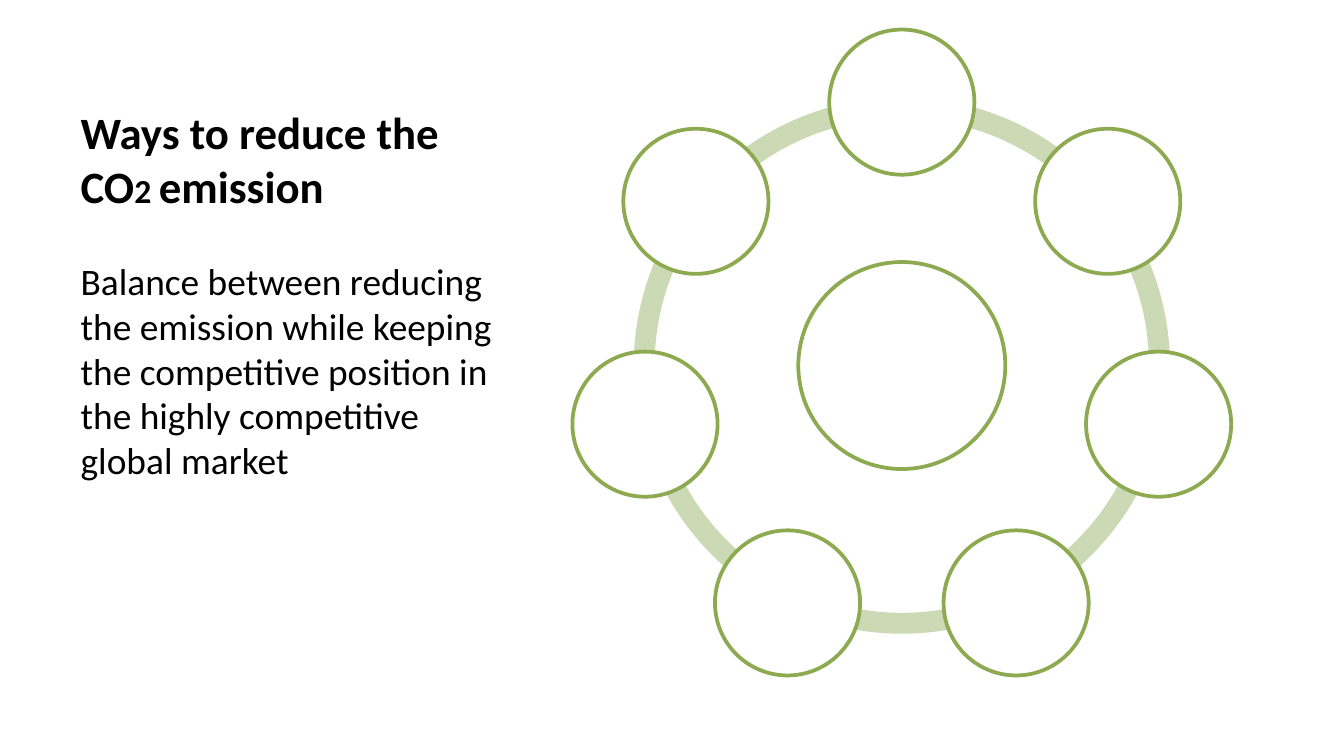
import math

from pptx import Presentation
from pptx import util as u
from pptx.dml.color import RGBColor
from pptx.enum import shapes, text

COLORS = {"text": "000000", "arc": "CBDAB5", "line": "8DAA51", "fill": "FFFFFF"}
TITLE = [("Ways to reduce the CO", 24), ("2 ", 18), ("emission", 24)]
BODY = [("Balance between reducing the emission while keeping the competitive "
         "position in the highly competitive global market", 20)]
NODES = 7


def rgb(name):
    """Return the named colour."""
    return RGBColor.from_string(COLORS[name])


def fill_placeholder(sp, box, runs, anchor, bold):
    """Move a placeholder to its box and write its formatted runs."""
    for name, value in zip(("left", "top", "width", "height"), box):
        setattr(sp, name, u.Inches(value))
    tf = sp.text_frame
    frame = {"word_wrap": True, "auto_size": text.MSO_AUTO_SIZE.NONE,
             "vertical_anchor": anchor}
    for name, value in frame.items():
        setattr(tf, name, value)
    p = tf.paragraphs[0]
    p.alignment = text.PP_ALIGN.LEFT
    p.space_before = u.Pt(0)
    for words, size in runs:
        r = p.add_run()
        r.text = words
        fmt = {"name": "Calibri", "size": u.Pt(size), "bold": bold}
        for name, value in fmt.items():
            setattr(r.font, name, value)
        r.font.color.rgb = rgb("text")


def add_caption(s, left, top, width):
    """Place the title above the body text in the left column."""
    title, body = s.shapes.title, s.placeholders[2]
    fill_placeholder(title, (left, top, width, 1.41), TITLE,
                     text.MSO_ANCHOR.BOTTOM, True)
    fill_placeholder(body, (left, top + 1.65, width, 3.16), BODY,
                     text.MSO_ANCHOR.TOP, False)


def add_round(group, kind, cx, cy, size, fill, line=None):
    """Add a round shape centred on a point."""
    sp = group.shapes.add_shape(kind, u.Inches(cx - size / 2), u.Inches(cy - size / 2),
                                u.Inches(size), u.Inches(size))
    sp.shadow.inherit = False
    sp.fill.solid()
    sp.fill.fore_color.rgb = rgb(fill)
    if line:
        sp.line.color.rgb = rgb(line)
        sp.line.width = u.Pt(2)
    else:
        sp.line.fill.background()
    return sp


def add_cycle(s, cx, cy, radius):
    """Draw the ring of arcs, the hub and the circles around it."""
    group = s.shapes.add_group_shape()
    step = 360 / NODES
    angles = [270 + i * step for i in range(NODES)]
    for angle in [angles[0], *reversed(angles[1:])]:
        arc = add_round(group, shapes.MSO_SHAPE.BLOCK_ARC, cx, cy, 3.99, "arc")
        arc.adjustments[0] = (angle - step) % 360 * 0.6
        arc.adjustments[1] = angle % 360 * 0.6
        arc.adjustments[2] = 0.039
    add_round(group, shapes.MSO_SHAPE.OVAL, cx, cy, 1.54, "fill", "line")
    for angle in map(math.radians, angles):
        add_round(group, shapes.MSO_SHAPE.OVAL, cx + radius * math.cos(angle),
                  cy + radius * math.sin(angle), 1.08, "fill", "line")


def main():
    """Build and save the slide."""
    prs = Presentation()
    prs.slide_width = u.Inches(10)
    prs.slide_height = prs.slide_width * 9 // 16
    s = prs.slides.add_slide(prs.slide_layouts[7])
    content = s.placeholders[1].element
    content.getparent().remove(content)
    add_caption(s, 0.5, 0.22, 3.29)
    add_cycle(s, 6.71, 2.72, 1.96)
    prs.save("out.pptx")


if __name__ == "__main__":
    main()
